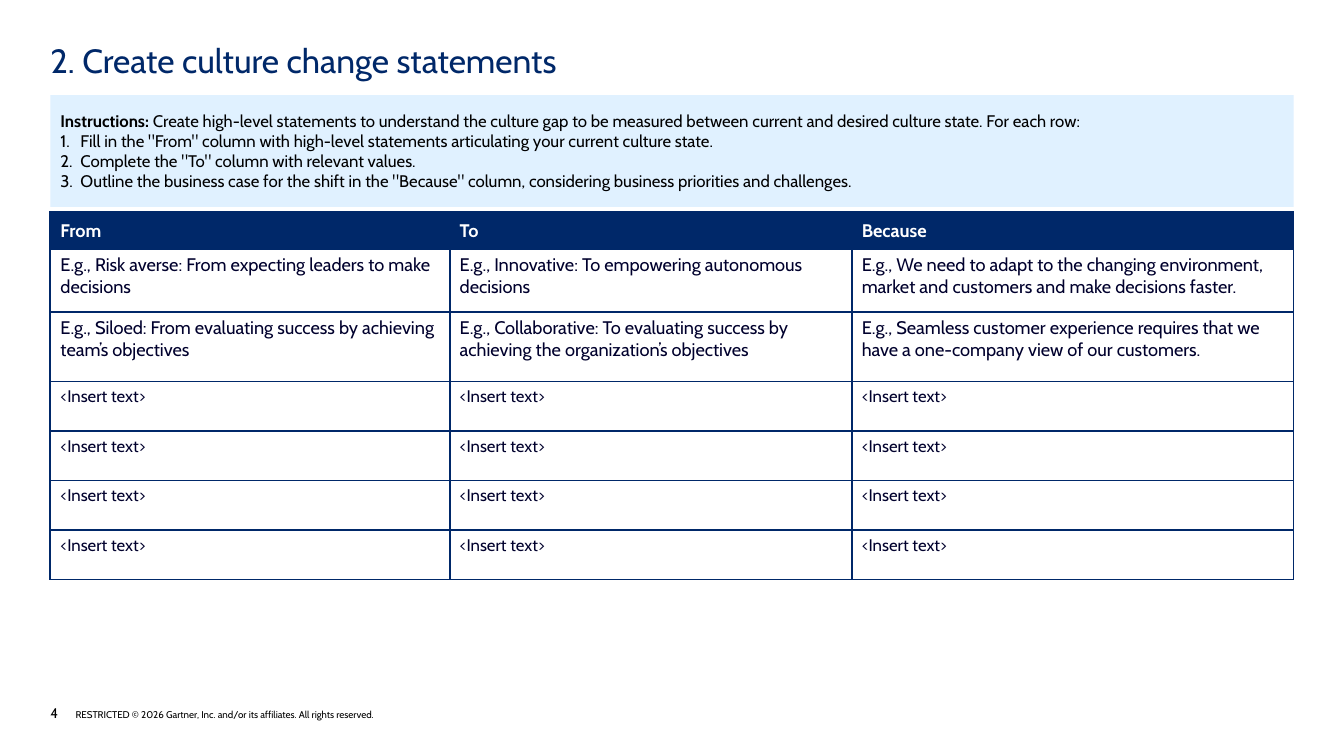
import dataclasses
import typing

import lxml.etree
import pptx
import pptx.dml.color
import pptx.enum.shapes
import pptx.enum.text
import pptx.oxml.ns
import pptx.util

Pt = pptx.util.Pt
ANCHOR = pptx.enum.text.MSO_ANCHOR


@dataclasses.dataclass(frozen=True)
class Theme:
    font: str = "Cabin"
    navy: str = "002869"
    ink: str = "00002D"
    black: str = "000000"
    white: str = "FFFFFF"
    pale: str = "E0F1FF"
    title: int = 24
    head: int = 13
    example: int = 13
    body: int = 12
    page: int = 10
    legal: int = 7
    border: float = 1.5


@dataclasses.dataclass(frozen=True)
class Box:
    left: float
    top: float
    width: float
    height: float

    def emu(self) -> tuple:
        return tuple(Pt(v) for v in dataclasses.astuple(self))


@dataclasses.dataclass(frozen=True)
class Row:
    height: float
    texts: tuple
    size: int
    header: bool = False


THEME = Theme()
LEFT, WIDTH = 36, 888
TITLE = Box(LEFT, 28.8, WIDTH, 35.3)
PANEL = Box(LEFT, 67.9, WIDTH, 80)
GRID = Box(LEFT, 151.7, WIDTH, 262)
FOOTER = Box(LEFT, 503.3, 575, 12.2)
COLUMNS = (285.2, 287.2, 315.6)
STEPS = (
    'Fill in the "From" column with high-level statements articulating your current culture state.',
    'Complete the "To" column with relevant values.',
    'Outline the business case for the shift in the "Because" column, '
    'considering business priorities and challenges.',
)
ROWS = (
    Row(26.2, ("From", "To", "Because"), THEME.head, True),
    Row(45.2, (
        "E.g., Risk averse: From expecting leaders to make decisions",
        "E.g., Innovative: To empowering autonomous decisions",
        "E.g., We need to adapt to the changing environment, market and customers "
        "and make decisions faster.",
    ), THEME.example),
    Row(49.4, (
        "E.g., Siloed: From evaluating success by achieving team’s objectives",
        "E.g., Collaborative: To evaluating success by achieving the organization’s objectives",
        "E.g., Seamless customer experience requires that we have a one-company view "
        "of our customers.",
    ), THEME.example),
    *[Row(35.4, ("<Insert text>",) * len(COLUMNS), THEME.body)] * 4,
)


def rgb(color: str) -> pptx.dml.color.RGBColor:
    """Convert a hex colour."""
    return pptx.dml.color.RGBColor.from_string(color)


def child(parent: typing.Any, tag: str, **attrs: str) -> typing.Any:
    """Append a DrawingML element to its parent."""
    return lxml.etree.SubElement(parent, pptx.oxml.ns.qn(tag), attrs)


def add_run(p: typing.Any, text: str, size: float, color: str, bold: bool = False) -> None:
    """Add one styled run to a paragraph."""
    r = p.add_run()
    r.text = text
    r.font.name, r.font.size, r.font.bold = THEME.font, Pt(size), bold
    r.font.color.rgb = rgb(color)


def hang(p: typing.Any, indent: float) -> typing.Any:
    """Give a paragraph a hanging indent and return its properties."""
    props = p._p.get_or_add_pPr()
    props.set("marL", str(Pt(indent)))
    props.set("indent", str(-Pt(indent)))
    return props


def add_text(s: typing.Any, box: Box, anchor: typing.Any) -> typing.Any:
    """Add a text box without margins and return its first paragraph."""
    tf = s.shapes.add_textbox(*box.emu()).text_frame
    tf.word_wrap, tf.vertical_anchor = True, anchor
    tf.margin_left = tf.margin_right = tf.margin_top = tf.margin_bottom = 0
    return tf.paragraphs[0]


def add_panel(s: typing.Any) -> None:
    """Draw the instructions panel with its numbered steps."""
    sp = s.shapes.add_shape(pptx.enum.shapes.MSO_SHAPE.RECTANGLE, *PANEL.emu())
    sp.shadow.inherit = False
    sp.fill.solid()
    sp.fill.fore_color.rgb = rgb(THEME.pale)
    sp.line.fill.background()
    tf = sp.text_frame
    tf.word_wrap, tf.vertical_anchor = True, ANCHOR.MIDDLE
    p = tf.paragraphs[0]
    p.alignment = pptx.enum.text.PP_ALIGN.LEFT
    add_run(p, "Instructions: ", THEME.body, THEME.black, True)
    add_run(p, "Create high-level statements to understand the culture gap to be measured "
               "between current and desired culture state. For each row:", THEME.body, THEME.black)
    for step in STEPS:
        p = tf.add_paragraph()
        p.alignment = pptx.enum.text.PP_ALIGN.LEFT
        props = hang(p, 14.4)
        child(child(props, "a:buClr"), "a:srgbClr", val=THEME.black)
        child(props, "a:buFont", typeface="+mj-lt")
        child(props, "a:buAutoNum", type="arabicPeriod")
        add_run(p, step, THEME.body, THEME.black)


def set_borders(cell: typing.Any) -> None:
    """Outline all four sides of a cell."""
    props = cell._tc.get_or_add_tcPr()
    for i, side in enumerate(("a:lnL", "a:lnR", "a:lnT", "a:lnB")):
        line = child(props, side, w=str(Pt(THEME.border)))
        child(child(line, "a:solidFill"), "a:srgbClr", val=THEME.navy)
        props.insert(i, line)


def fill_cell(cell: typing.Any, text: str, row: Row) -> None:
    """Style one table cell and write its text."""
    if row.header:
        cell.fill.solid()
        cell.fill.fore_color.rgb = rgb(THEME.navy)
    else:
        cell.fill.background()
    cell.vertical_anchor = ANCHOR.MIDDLE if row.header else ANCHOR.TOP
    set_borders(cell)
    color = THEME.white if row.header else THEME.ink
    add_run(cell.text_frame.paragraphs[0], text, row.size, color, row.header)


def add_statements(s: typing.Any) -> None:
    """Draw the table of culture change statements."""
    table = s.shapes.add_table(len(ROWS), len(COLUMNS), *GRID.emu()).table
    table.horz_banding = False
    for column, width in zip(table.columns, COLUMNS):
        column.width = Pt(width)
    for i, row in enumerate(ROWS):
        table.rows[i].height = Pt(row.height)
        for j, text in enumerate(row.texts):
            fill_cell(table.cell(i, j), text, row)


def main() -> None:
    """Build the slide and save it."""
    prs = pptx.Presentation()
    prs.slide_width, prs.slide_height = Pt(960), Pt(540)
    s = prs.slides.add_slide(prs.slide_layouts[6])
    p = add_text(s, FOOTER, ANCHOR.BOTTOM)
    hang(p, 18)
    add_run(p, "4", THEME.page, THEME.black)
    add_run(p, "\tRESTRICTED © 2026 Gartner, Inc. and/or its affiliates. All rights reserved.",
            THEME.legal, THEME.black)
    p = add_text(s, TITLE, ANCHOR.TOP)
    add_run(p, "2. Create culture change statements", THEME.title, THEME.navy)
    add_statements(s)
    add_panel(s)
    prs.save("out.pptx")


if __name__ == "__main__":
    main()
